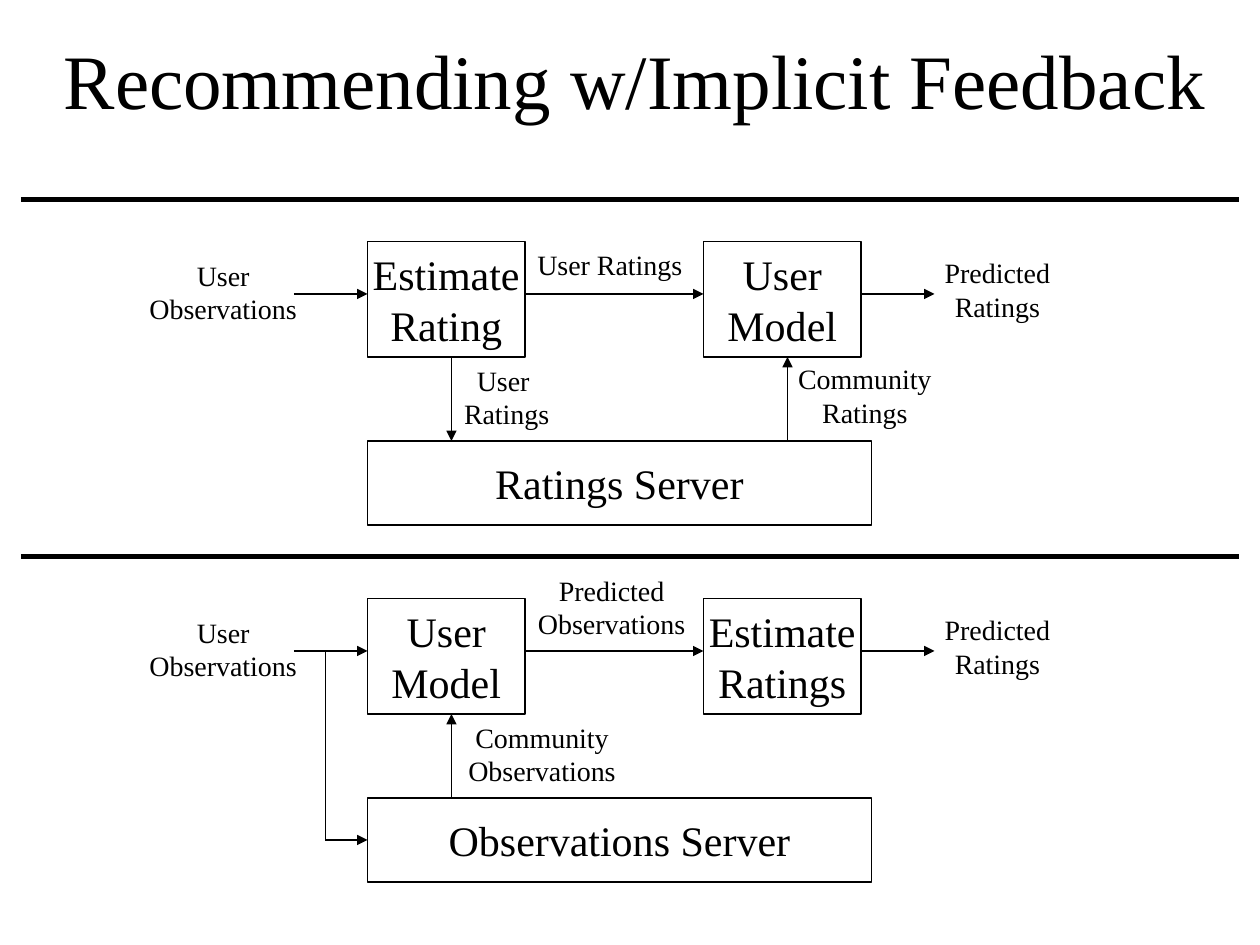
from dataclasses import dataclass

from lxml.etree import SubElement
from pptx import Presentation
from pptx.dml.color import RGBColor
from pptx.enum.shapes import MSO_CONNECTOR, MSO_SHAPE
from pptx.enum.text import MSO_ANCHOR, MSO_AUTO_SIZE, PP_ALIGN
from pptx.oxml.ns import qn
from pptx.shapes.autoshape import Shape
from pptx.shapes.connector import Connector
from pptx.slide import Slide
from pptx.util import Emu, Pt

EMU_PER_PX = 9525


@dataclass(frozen=True)
class Theme:
    font: str = "Times New Roman"
    ink: RGBColor = RGBColor(0, 0, 0)
    title_size: int = 44
    box_size: int = 24
    label_size: int = 16
    thin_line: float = 0.75
    rule_line: float = 3


@dataclass(frozen=True)
class TextItem:
    text: str
    left: int
    top: int
    width: int
    height: int
    align: PP_ALIGN = PP_ALIGN.CENTER


@dataclass(frozen=True)
class Line:
    start_x: int
    start_y: int
    end_x: int
    end_y: int
    arrow: bool = True


@dataclass(frozen=True)
class Panel:
    top: int
    first_box: str
    second_box: str
    server: str
    labels: tuple[TextItem, ...]
    lines: tuple[Line, ...]


THEME = Theme()
RULE_LEFT, RULE_RIGHT = 16, 944
LABEL_HEIGHT = 61

SHARED_LABELS = (
    TextItem("User\nObservations", 104, 40, 132, LABEL_HEIGHT),
    TextItem("Predicted\nRatings", 710, 38, 100, LABEL_HEIGHT),
)
SHARED_LINES = (
    Line(224, 72, 280, 72),
    Line(400, 72, 536, 72),
    Line(656, 72, 712, 72),
)
SERVER_INPUT = Line(248, 216, 280, 216)

RATINGS_PANEL = Panel(
    152, "Estimate\nRating", "User\nModel", "Ratings Server",
    (
        TextItem("User Ratings", 400, 32, 131, 36, PP_ALIGN.LEFT),
        TextItem("Community\nRatings", 598, 119, 122, LABEL_HEIGHT),
        TextItem("User \nRatings", 344, 120, 84, LABEL_HEIGHT),
    ),
    (Line(344, 120, 344, 184), Line(600, 184, 600, 120)),
)
OBSERVATIONS_PANEL = Panel(
    424, "User\nModel", "Estimate\nRatings", "Observations Server",
    (
        TextItem("Predicted\nObservations", 400, 8, 132, LABEL_HEIGHT),
        TextItem("Community\nObservations", 347, 120, 132, LABEL_HEIGHT),
    ),
    (Line(344, 184, 344, 120), Line(248, 72, 248, 216, arrow=False)),
)


def px(length: int) -> Emu:
    return Emu(length * EMU_PER_PX)


def write_text(shape: Shape, item: TextItem, size: int) -> None:
    frame = shape.text_frame
    frame.text = item.text
    for para in frame.paragraphs:
        para.alignment = item.align
        for span in para.runs:
            span.font.name = THEME.font
            span.font.size = Pt(size)
            span.font.color.rgb = THEME.ink


def add_title(page: Slide, item: TextItem) -> None:
    box = page.shapes.add_textbox(
        px(item.left), px(item.top), px(item.width), px(item.height))
    write_text(box, item, THEME.title_size)
    box.text_frame.word_wrap = True
    box.text_frame.vertical_anchor = MSO_ANCHOR.MIDDLE


def add_label(page: Slide, item: TextItem, offset: int) -> None:
    box = page.shapes.add_textbox(
        px(item.left), px(item.top + offset), px(item.width), px(item.height))
    write_text(box, item, THEME.label_size)
    box.text_frame.word_wrap = False
    box.text_frame.auto_size = MSO_AUTO_SIZE.SHAPE_TO_FIT_TEXT


def add_box(page: Slide, item: TextItem, offset: int) -> Shape:
    box = page.shapes.add_shape(
        MSO_SHAPE.RECTANGLE,
        px(item.left), px(item.top + offset), px(item.width), px(item.height))
    box.shadow.inherit = False
    box.fill.background()
    box.line.color.rgb = THEME.ink
    box.line.width = Pt(THEME.thin_line)
    write_text(box, item, THEME.box_size)
    box.text_frame.word_wrap = False
    box.text_frame.vertical_anchor = MSO_ANCHOR.MIDDLE
    return box


def add_line(page: Slide, line: Line, offset: int = 0,
             weight: float = THEME.thin_line) -> Connector:
    connector = page.shapes.add_connector(
        MSO_CONNECTOR.STRAIGHT,
        px(line.start_x), px(line.start_y + offset),
        px(line.end_x), px(line.end_y + offset))
    connector.line.color.rgb = THEME.ink
    connector.line.width = Pt(weight)
    if line.arrow:
        outline = connector.line._get_or_add_ln()
        SubElement(outline, qn("a:tailEnd"), type="triangle")
    SubElement(connector._element.spPr, qn("a:effectLst"))
    return connector


def add_panel(page: Slide, panel: Panel) -> Shape:
    add_box(page, TextItem(panel.first_box, 280, 32, 120, 88), panel.top)
    add_box(page, TextItem(panel.second_box, 536, 32, 120, 88), panel.top)
    server = add_box(page, TextItem(panel.server, 280, 184, 384, 64), panel.top)
    for line in SHARED_LINES + panel.lines:
        add_line(page, line, panel.top)
    for label in SHARED_LABELS + panel.labels:
        add_label(page, label, panel.top)
    rule = Line(RULE_LEFT, 0, RULE_RIGHT, 0, arrow=False)
    add_line(page, rule, panel.top, THEME.rule_line)
    return server


def main() -> None:
    deck = Presentation()
    deck.slide_width, deck.slide_height = px(960), px(720)
    page = deck.slides.add_slide(deck.slide_layouts[6])
    add_title(page, TextItem("Recommending w/Implicit Feedback", 24, 0, 920, 120))
    add_panel(page, RATINGS_PANEL)
    observations_server = add_panel(page, OBSERVATIONS_PANEL)
    server_input = add_line(page, SERVER_INPUT, OBSERVATIONS_PANEL.top)
    server_input.end_connect(observations_server, 1)
    deck.save("out.pptx")


if __name__ == "__main__":
    main()
